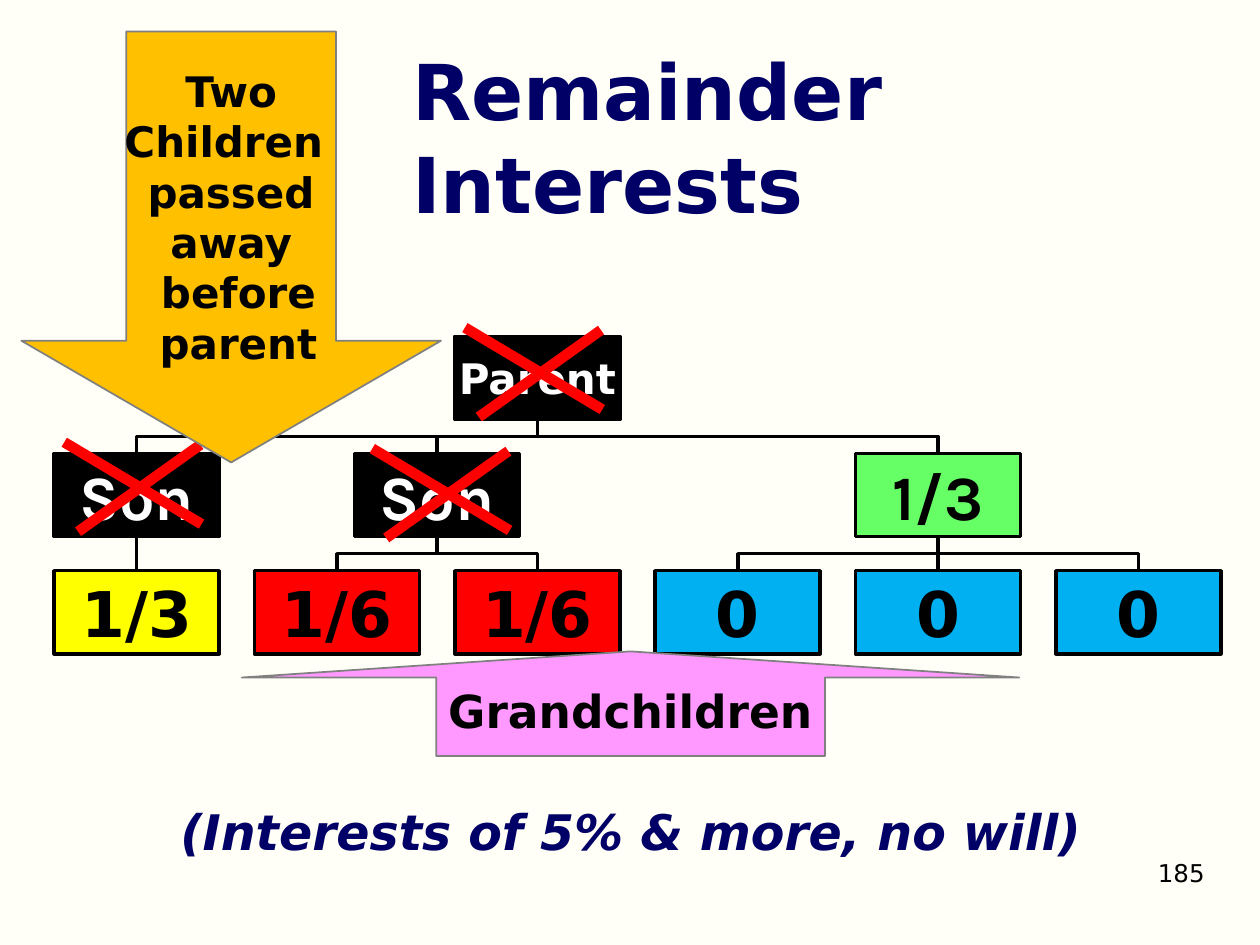
from lxml import etree
from pptx import Presentation, util as u
from pptx.dml.color import RGBColor
from pptx.enum import shapes, text
from pptx.oxml.ns import qn

HUES = {"page": "FFFFF7", "navy": "000066", "black": "000000", "white": "FFFFFF",
        "yellow": "FFFF00", "red": "FF0000", "green": "66FF66", "blue": "00B0F0",
        "pink": "FF99FF", "gold": "FFC000", "gray": "808080"}
HUES = {name: RGBColor.from_string(code) for name, code in HUES.items()}
SANS = "DejaVu Sans"
MID = text.PP_ALIGN.CENTER

deck = Presentation()
deck.slide_width, deck.slide_height = u.Inches(10), u.Inches(7.5)
slide = deck.slides.add_slide(deck.slide_layouts[5])
slide.background.fill.solid()
slide.background.fill.fore_color.rgb = HUES["page"]
items = slide.shapes


def write(frame, lines, size, hue, align=MID, font=SANS, bold=True, slant=False, inset=None):
    """Fill a frame with one paragraph per line; a newline in a line is a soft break."""
    frame.vertical_anchor = text.MSO_ANCHOR.MIDDLE
    if inset is not None:
        frame.margin_left = frame.margin_right = u.Inches(inset)
        frame.margin_top = frame.margin_bottom = u.Inches(inset)
    for i, line in enumerate(lines):
        para = frame.paragraphs[0] if i == 0 else frame.add_paragraph()
        para.alignment = align
        para.space_before = u.Pt(0)
        for j, part in enumerate(line.split("\n")):
            if j:
                para.add_line_break()
            run = para.add_run()
            run.text = part
            run.font.name, run.font.size = font, u.Pt(size)
            run.font.bold, run.font.italic = bold, slant
            run.font.color.rgb = HUES[hue]


def block(kind, area, fill, line, width):
    shape = items.add_shape(kind, *(u.Inches(n) for n in area))
    shape.shadow.inherit = False
    shape.fill.solid()
    shape.fill.fore_color.rgb = HUES[fill]
    shape.line.color.rgb = HUES[line]
    shape.line.width = u.Pt(width)
    return shape


# Title, caption and page number
title = items.title
title.left, title.top, title.width, title.height = (u.Inches(n) for n in (3.17, 0.33, 6.83, 1.5))
title.text_frame.auto_size = text.MSO_AUTO_SIZE.NONE
write(title.text_frame, ["Remainder Interests"], 44, "navy", text.PP_ALIGN.LEFT)

for area, words, size, hue, align, strong in [
        ((0.43, 6.31, 9.15, 0.57), "(Interests of 5% & more, no will)", 28, "navy", MID, True),
        ((7.33, 6.75, 2.33, 0.35), "185", 14, "black", text.PP_ALIGN.RIGHT, False)]:
    box = items.add_textbox(*(u.Inches(n) for n in area))
    box.text_frame.word_wrap = True
    write(box.text_frame, [words], size, hue, align, bold=strong, slant=strong)

# Family tree on a grid: column, row, words, fill, text colour, font, size
LEFT, TOP, STEP, DROP, WIDE, HIGH = 0.43, 2.67, 1.59, 0.93, 1.31, 0.66
tree = [
    (2, 0, "Parent", "black", "white", SANS, 24),
    (0, 1, "Son", "black", "white", "Karla", 36),
    (1.5, 1, "Son", "black", "white", "Karla", 36),
    (4, 1, "1/3", "green", "black", "Karla", 36),
    (0, 2, "1/3", "yellow", "black", SANS, 36),
    (1, 2, "1/6", "red", "black", SANS, 36),
    (2, 2, "1/6", "red", "black", SANS, 36),
    (3, 2, "0", "blue", "black", SANS, 36),
    (4, 2, "0", "blue", "black", SANS, 36),
    (5, 2, "0", "blue", "black", SANS, 36),
]
heirs = {0: (1, 2, 3), 1: (4,), 2: (5, 6), 3: (7, 8, 9)}

nodes = []
for col, row, words, fill, hue, font, size in tree:
    area = (LEFT + col * STEP, TOP + row * DROP, WIDE, HIGH)
    node = block(shapes.MSO_SHAPE.RECTANGLE, area, fill, "black", 2)
    node.text_frame.word_wrap = False
    write(node.text_frame, [words], size, hue, font=font, inset=0.03)
    nodes.append(node)

for elder, young in heirs.items():
    start = nodes[elder]
    x, y = start.left + start.width // 2, start.top + start.height
    for key in young:
        end = nodes[key]
        to = end.left + end.width // 2
        if tree[key][0] == tree[elder][0]:
            link = items.add_connector(shapes.MSO_CONNECTOR.STRAIGHT, x, y, to, end.top)
            link.begin_connect(start, 2)
            link.end_connect(end, 0)
            etree.SubElement(link._element.spPr, qn("a:effectLst"))
        else:
            bend = (y + end.top) // 2
            path = items.build_freeform(x, y)
            path.add_line_segments([(x, bend), (to, bend), (to, end.top)], close=False)
            link = path.convert_to_shape()
            link.fill.background()
            link.shadow.inherit = False
        link.line.color.rgb = HUES["black"]
        link.line.width = u.Pt(2)

# Red crosses over the deceased, each nudged slightly from its box
strokes = [(1.17, 0.58, 0.08, -0.07), (0.19, 0.64, 1.16, -0.05)]
for key, dx, dy in [(0, 0, 0), (1, 0, -0.02), (2, 0.06, 0.03)]:
    x = LEFT + tree[key][0] * STEP + dx
    y = TOP + tree[key][1] * DROP + dy
    for x1, y1, x2, y2 in strokes:
        ends = (u.Inches(n) for n in (x + x1, y + y1, x + x2, y + y2))
        bar = items.add_connector(shapes.MSO_CONNECTOR.STRAIGHT, *ends)
        bar.line.color.rgb = HUES["red"]
        bar.line.width = u.Pt(6)
        etree.SubElement(bar._element.spPr, qn("a:effectLst"))

# Block arrows
for kind, area, head, fill, lines, size in [
        (shapes.MSO_SHAPE.UP_ARROW, (1.92, 5.17, 6.17, 0.83), 0.25, "pink",
         ["Grandchildren"], 26),
        (shapes.MSO_SHAPE.DOWN_ARROW, (0.17, 0.25, 3.33, 3.42), 0.29, "gold",
         ["Two\nChildren ", "passed", "away", " before", " parent"], 24)]:
    arrow = block(kind, area, fill, "gray", 1)
    arrow.adjustments[0], arrow.adjustments[1] = 0.5, head
    arrow.text_frame.word_wrap = False
    write(arrow.text_frame, lines, size, "black")

deck.save("out.pptx")
